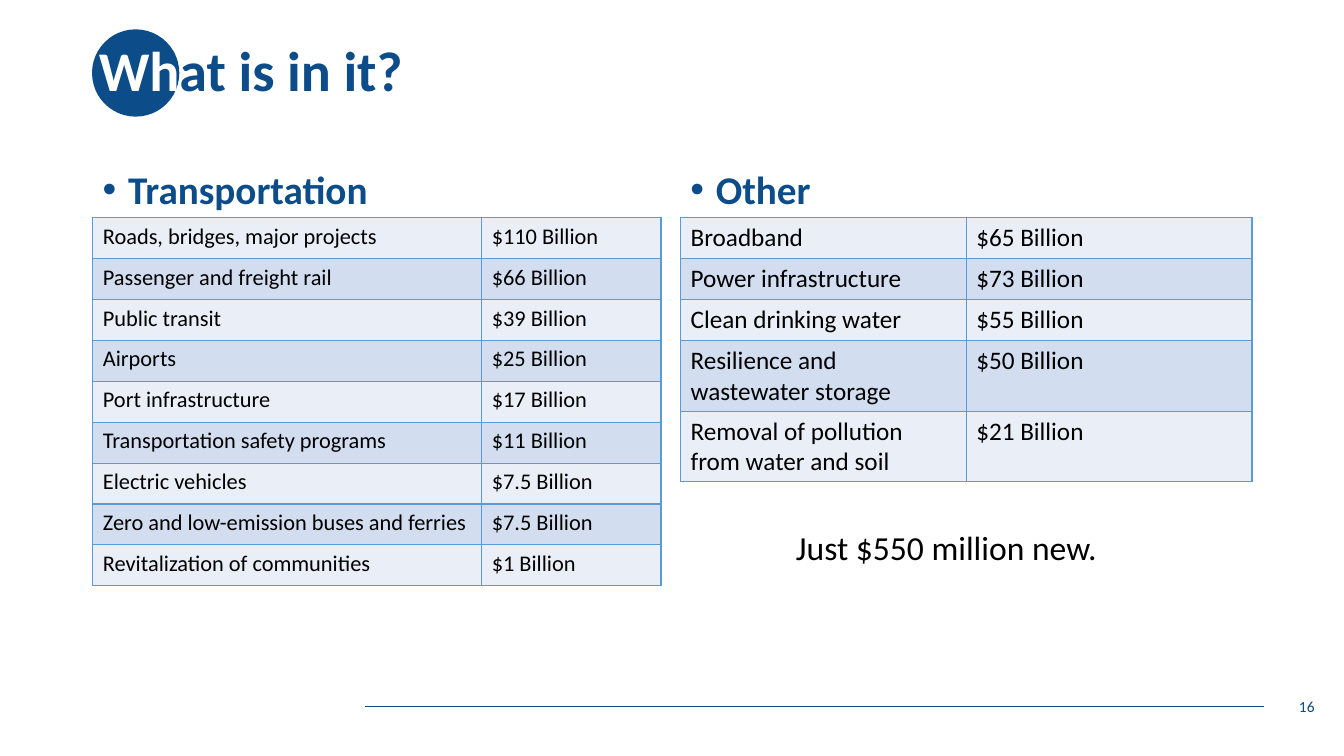
from lxml.etree import SubElement
from pptx import Presentation
from pptx.dml.color import RGBColor
from pptx.enum.shapes import MSO_CONNECTOR, MSO_SHAPE
from pptx.enum.text import MSO_ANCHOR, PP_ALIGN
from pptx.oxml.ns import qn
from pptx.util import Cm, Pt

NAVY = RGBColor(0x0C, 0x4C, 0x88)
WHITE = RGBColor(0xFF, 0xFF, 0xFF)
BLACK = RGBColor(0x00, 0x00, 0x00)
BORDER = RGBColor(0x5B, 0x9B, 0xD5)
BANDS = (RGBColor(0xEA, 0xEF, 0xF7), RGBColor(0xD2, 0xDE, 0xEF))
FONT = "Calibri"
HEADING_HEIGHT = 2.29
ROW_HEIGHT = 1.03

TRANSPORTATION = [
    ("Roads, bridges, major projects", "$110 Billion"),
    ("Passenger and freight rail", "$66 Billion"),
    ("Public transit", "$39 Billion"),
    ("Airports", "$25 Billion"),
    ("Port infrastructure", "$17 Billion"),
    ("Transportation safety programs", "$11 Billion"),
    ("Electric vehicles", "$7.5 Billion"),
    ("Zero and low-emission buses and ferries", "$7.5 Billion"),
    ("Revitalization of communities", "$1 Billion"),
]
OTHER = [
    ("Broadband", "$65 Billion"),
    ("Power infrastructure", "$73 Billion"),
    ("Clean drinking water", "$55 Billion"),
    ("Resilience and wastewater storage", "$50 Billion"),
    ("Removal of pollution from water and soil", "$21 Billion"),
]


def style_font(font, size, color, bold=False):
    """Set the typeface, size, colour and weight of a font."""
    font.name = FONT
    font.size = Pt(size)
    font.color.rgb = color
    font.bold = bold


def add_text(slide, left, top, width, height, text, anchor=MSO_ANCHOR.TOP, wrap=True):
    """Add a text box and return its only paragraph."""
    frame = slide.shapes.add_textbox(Cm(left), Cm(top), Cm(width), Cm(height)).text_frame
    frame.word_wrap = wrap
    frame.vertical_anchor = anchor
    paragraph = frame.paragraphs[0]
    paragraph.text = text
    return paragraph


def add_title(slide, left, top, width, height):
    """Place the title with its first letters over a navy disc."""
    disc = slide.shapes.add_shape(
        MSO_SHAPE.OVAL, Cm(left + 0.08), Cm(top + 0.74), Cm(2.2), Cm(2.2))
    disc.shadow.inherit = False
    disc.fill.solid()
    disc.fill.fore_color.rgb = NAVY
    disc.line.fill.background()
    paragraph = add_text(slide, left, top, width, height, "", MSO_ANCHOR.MIDDLE)
    paragraph.line_spacing = 0.9
    for text, color in (("Wh", WHITE), ("at is in it?", NAVY)):
        run = paragraph.add_run()
        run.text = text
        style_font(run.font, 40, color, bold=True)


def add_footer(slide, left, top, width):
    """Draw the footer rule and the slide number to its right."""
    rule = slide.shapes.add_connector(
        MSO_CONNECTOR.STRAIGHT, Cm(left), Cm(top), Cm(left + width), Cm(top))
    rule.line.color.rgb = NAVY
    rule.line.width = Pt(0.5)
    SubElement(rule._element.spPr, qn("a:effectLst"))
    number = add_text(slide, left + width - 6.09, top - 0.51, 7.62, 1.02, "16",
                      MSO_ANCHOR.MIDDLE)
    number.alignment = PP_ALIGN.RIGHT
    style_font(number.font, 11, NAVY)


def add_heading(slide, left, top, width, text):
    """Place a bulleted heading at the bottom of its box."""
    paragraph = add_text(slide, left, top, width, HEADING_HEIGHT, text, MSO_ANCHOR.BOTTOM)
    paragraph.line_spacing = 0.9
    properties = paragraph._p.get_or_add_pPr()
    properties.set("marL", str(Cm(0.64)))
    properties.set("indent", str(-Cm(0.64)))
    SubElement(properties, qn("a:buFont"), typeface="Arial")
    SubElement(properties, qn("a:buChar"), char="•")
    style_font(paragraph.font, 28, NAVY, bold=True)


def add_borders(cell):
    """Draw a thin blue line on every side of a cell."""
    properties = cell._tc.get_or_add_tcPr()
    for side in ("lnL", "lnR", "lnT", "lnB"):
        line = SubElement(properties, qn(f"a:{side}"), w=str(Pt(1)))
        fill = SubElement(line, qn("a:solidFill"))
        SubElement(fill, qn("a:srgbClr"), val=str(BORDER))


def add_funding(slide, left, top, column_widths, heading, rows, size):
    """Place a heading with its table of amounts below."""
    width = sum(column_widths)
    add_heading(slide, left, top, width, heading)
    table = slide.shapes.add_table(
        len(rows), len(column_widths), Cm(left), Cm(top + HEADING_HEIGHT),
        Cm(width), Cm(ROW_HEIGHT * len(rows))).table
    table.first_row = False
    table.horz_banding = False
    for column, column_width in zip(table.columns, column_widths):
        column.width = Cm(column_width)
    for row_index, row in enumerate(rows):
        for column_index, text in enumerate(row):
            cell = table.cell(row_index, column_index)
            add_borders(cell)
            cell.fill.solid()
            cell.fill.fore_color.rgb = BANDS[row_index % 2]
            cell.text = text
            style_font(cell.text_frame.paragraphs[0].font, size, BLACK)


def main():
    """Build the slide and save it."""
    presentation = Presentation()
    presentation.slide_width = Cm(33.87)
    presentation.slide_height = Cm(19.05)
    slide = presentation.slides.add_slide(presentation.slide_layouts[6])
    add_title(slide, 2.24, 0, 29.21, 3.68)
    add_footer(slide, 9.2, 17.81, 22.65)
    add_funding(slide, 2.34, 3.2, (9.8, 4.52), "Transportation", TRANSPORTATION, 16)
    add_funding(slide, 17.15, 3.2, (7.2, 7.2), "Other", OTHER, 18)
    note = add_text(slide, 19.81, 13.16, 8.15, 1.27, "Just $550 million new.", wrap=False)
    style_font(note.font, 24, BLACK)
    presentation.save("out.pptx")


if __name__ == "__main__":
    main()
